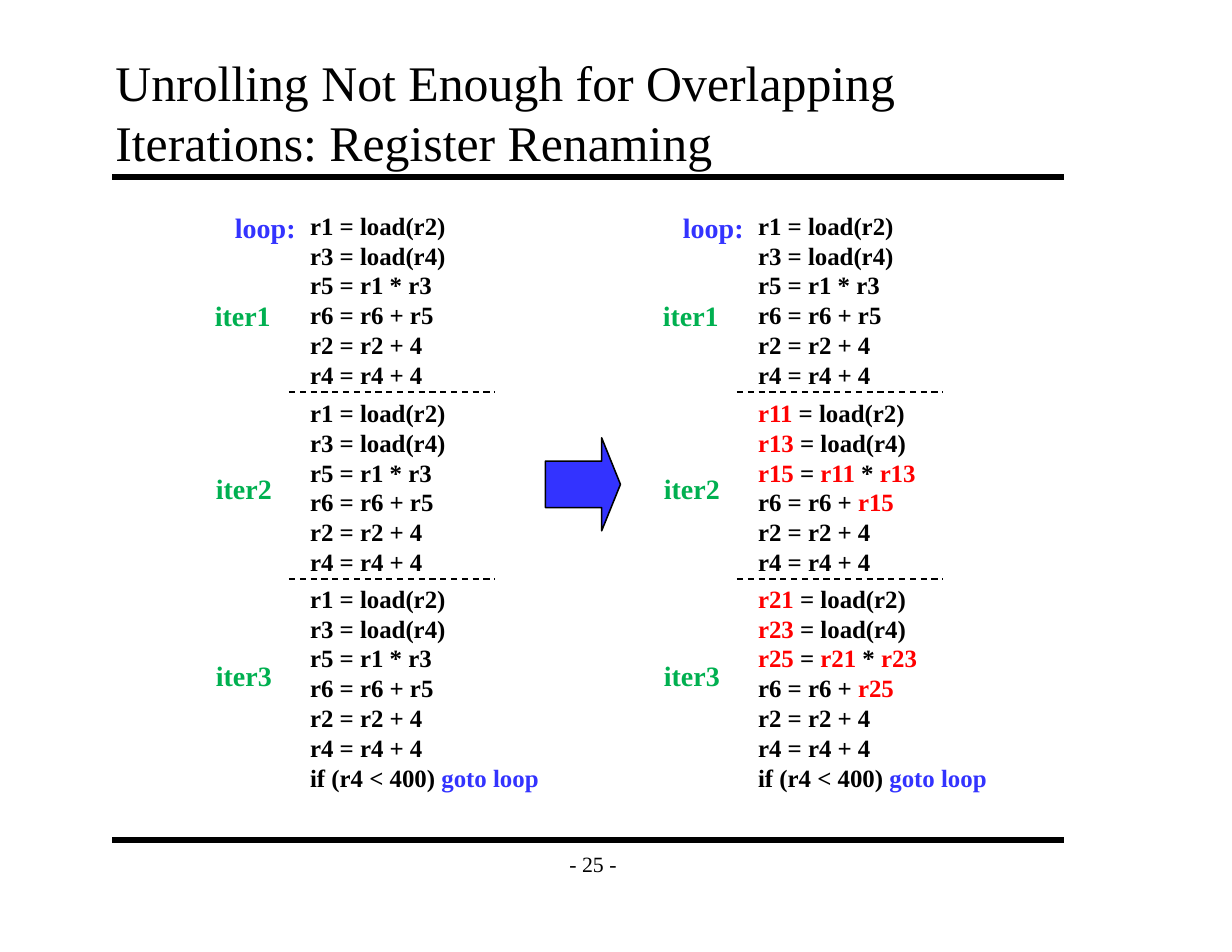
"""Build a slide on register renaming across unrolled loop iterations."""
from dataclasses import dataclass

from lxml.etree import SubElement
from pptx import Presentation
from pptx.dml.color import RGBColor
from pptx.enum.dml import MSO_LINE_DASH_STYLE as Dash
from pptx.enum.shapes import MSO_CONNECTOR as Connector, MSO_SHAPE as Shape
from pptx.enum.text import MSO_ANCHOR as Anchor, MSO_AUTO_SIZE as AutoSize, PP_ALIGN as Align
from pptx.oxml.ns import qn
from pptx.util import Inches, Pt

COLORS = {"black": "000000", "blue": "3333FF", "green": "00B050", "red": "FF0000"}
FONT = "Times New Roman"
ITERATION = (
    "|r1| = load(r2)",
    "|r3| = load(r4)",
    "|r5| = |r1| * |r3|",
    "r6 = r6 + |r5|",
    "r2 = r2 + 4",
    "r4 = r4 + 4",
)
BRANCH = [("if (r4 < 400) ", "black"), ("goto loop", "blue")]
BLOCK_TOPS = (1.83, 3.5, 5.16)
DIVIDER_TOPS = (3.5, 5.17)
Run = tuple[str, str]


@dataclass
class Box:
    left: float
    top: float
    width: float
    height: float

    def inches(self) -> list[int]:
        return [Inches(value) for value in (self.left, self.top, self.width, self.height)]


@dataclass
class Listing:
    left: float
    prefixes: tuple[str, str, str]


LISTINGS = (Listing(2.67, ("", "", "")), Listing(6.67, ("", "1", "2")))
LABELS = (
    ("loop:", "blue", Box(-0.67, 1.83, 0.74, 0.4)),
    ("iter1", "green", Box(-0.85, 2.62, 0.7, 0.4)),
    ("iter2", "green", Box(-0.84, 4.16, 0.7, 0.4)),
    ("iter3", "green", Box(-0.84, 5.83, 0.7, 0.4)),
)


def rgb(color: str) -> RGBColor:
    return RGBColor.from_string(COLORS[color])


def set_frame(frame, **settings) -> None:
    for name, value in settings.items():
        setattr(frame, name, value)


def write_runs(paragraph, runs: list[Run], size: float, bold: bool) -> None:
    for text, color in runs:
        run = paragraph.add_run()
        run.text = text
        run.font.color.rgb = rgb(color)
        for name, value in {"name": FONT, "size": Pt(size), "bold": bold}.items():
            setattr(run.font, name, value)


def add_text(slide, box: Box, lines: list[list[Run]], size: float, bold: bool = True):
    shape = slide.shapes.add_textbox(*box.inches())
    frame = shape.text_frame
    set_frame(frame, word_wrap=False, auto_size=AutoSize.SHAPE_TO_FIT_TEXT)
    for index, runs in enumerate(lines):
        paragraph = frame.add_paragraph() if index else frame.paragraphs[0]
        write_runs(paragraph, runs, size, bold)
    return shape


def add_rule(slide, left: float, right: float, top: float, weight: float, dash=None) -> None:
    line = slide.shapes.add_connector(
        Connector.STRAIGHT, Inches(left), Inches(top), Inches(right), Inches(top))
    line.line.color.rgb = rgb("black")
    line.line.width = Pt(weight)
    line.line.dash_style = dash
    SubElement(line._element.spPr, qn("a:effectLst"))


def rename(line: str, prefix: str) -> list[Run]:
    if not prefix:
        return [(line.replace("|", ""), "black")]
    pieces = enumerate(line.split("|"))
    return [(piece.replace("r", "r" + prefix), "red") if index % 2 else (piece, "black")
            for index, piece in pieces if piece]


def add_listing(slide, listing: Listing) -> None:
    last = len(BLOCK_TOPS) - 1
    for index, (top, prefix) in enumerate(zip(BLOCK_TOPS, listing.prefixes)):
        lines = [rename(line, prefix) for line in ITERATION]
        width, height = (1.62 if prefix else 1.42), 1.7
        if index == last:
            lines.append(BRANCH)
            width, height = 2.25, 1.97
        add_text(slide, Box(listing.left, top, width, height), lines, 16)
    for top in DIVIDER_TOPS:
        add_rule(slide, listing.left - 0.09, listing.left + 1.75, top, 1, Dash.DASH)
    for text, color, offset in LABELS:
        box = Box(listing.left + offset.left, offset.top, offset.width, offset.height)
        add_text(slide, box, [[(text, color)]], 18)


def add_title(slide, text: str) -> None:
    title = slide.shapes.title
    title.left, title.top, title.width, title.height = Box(0.92, 0.92, 8.5, 0.67).inches()
    set_frame(title.text_frame, word_wrap=True, auto_size=AutoSize.NONE,
              vertical_anchor=Anchor.BOTTOM, margin_left=Inches(0.11),
              margin_right=Inches(0.11), margin_top=Inches(0.06), margin_bottom=Inches(0.06))
    paragraph = title.text_frame.paragraphs[0]
    paragraph.alignment = Align.LEFT
    write_runs(paragraph, [(text, "black")], 32, False)


def add_page_number(slide) -> None:
    shape = add_text(slide, Box(4.92, 7.5, 0.75, 0.42), [[("- 25 -", "black")]], 14, False)
    set_frame(shape.text_frame, auto_size=AutoSize.NONE, vertical_anchor=Anchor.MIDDLE)
    shape.text_frame.paragraphs[0].alignment = Align.CENTER


def add_arrow(slide) -> None:
    arrow = slide.shapes.add_shape(Shape.RIGHT_ARROW, *Box(4.87, 3.91, 0.67, 0.83).inches())
    arrow.adjustments[0], arrow.adjustments[1] = 0.5, 0.25
    arrow.shadow.inherit = False
    arrow.fill.solid()
    arrow.fill.fore_color.rgb = rgb("blue")
    arrow.line.color.rgb = rgb("black")
    arrow.line.width = Pt(1)


def main() -> None:
    presentation = Presentation()
    presentation.slide_width, presentation.slide_height = Inches(11), Inches(8.5)
    slide = presentation.slides.add_slide(presentation.slide_layouts[5])
    for top in (1.58, 7.5):
        add_rule(slide, 1, 9.5, top, 4)
    add_page_number(slide)
    add_title(slide, "Unrolling Not Enough for Overlapping Iterations: Register Renaming")
    for listing in LISTINGS:
        add_listing(slide, listing)
    add_arrow(slide)
    presentation.save("out.pptx")


if __name__ == "__main__":
    main()
